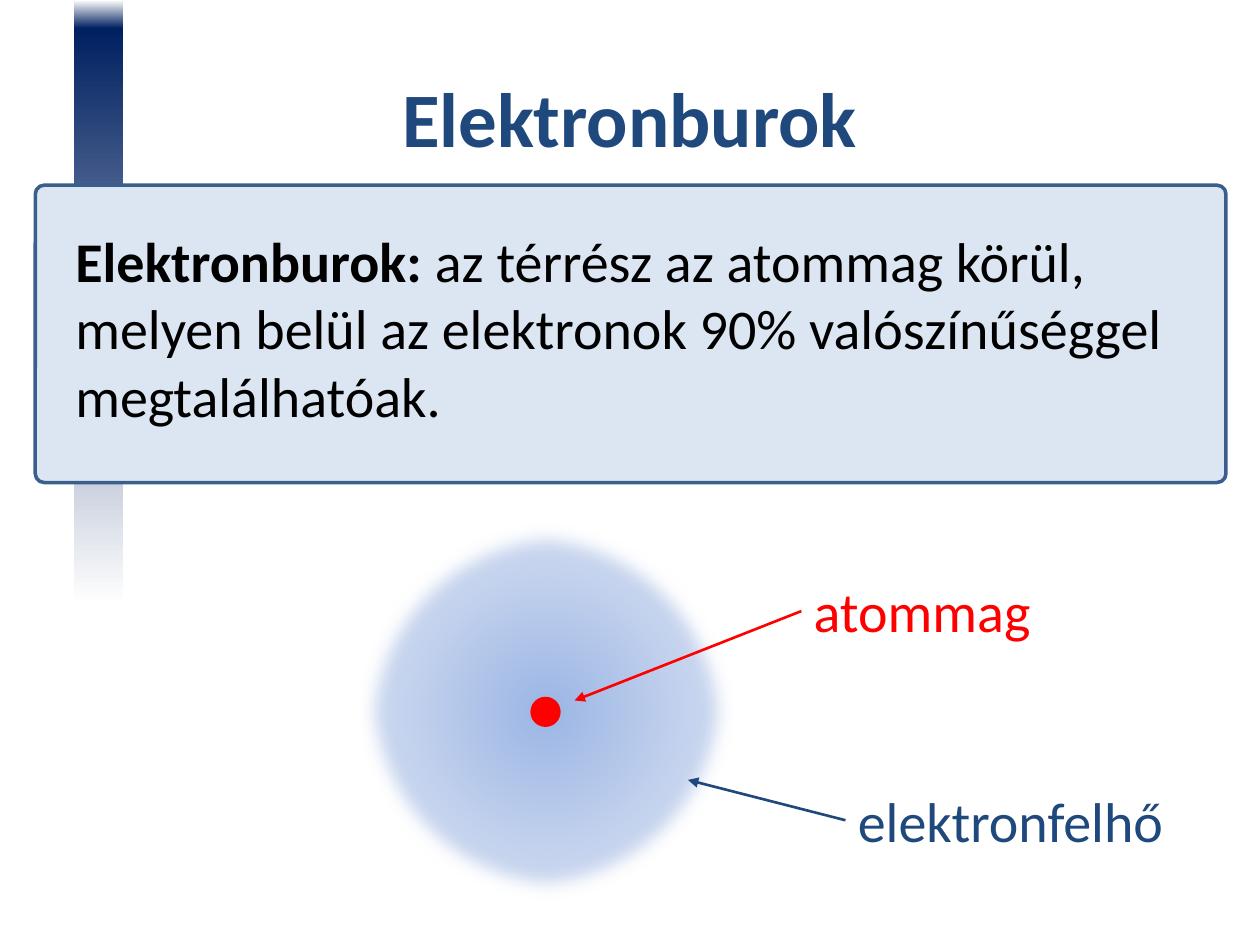
from lxml.etree import SubElement as Sub
from pptx import Presentation
from pptx.dml.color import RGBColor
from pptx.enum.shapes import MSO_CONNECTOR as Link, MSO_SHAPE as Form
from pptx.enum.text import MSO_ANCHOR as Anchor, PP_ALIGN as Align
from pptx.oxml.ns import qn
from pptx.util import Inches, Pt

BLACK = RGBColor(0x00, 0x00, 0x00)
WHITE = RGBColor(0xFF, 0xFF, 0xFF)
RED = RGBColor(0xFF, 0x00, 0x00)
BLUE = RGBColor(0x1F, 0x49, 0x7D)
NAVY = RGBColor(0x00, 0x20, 0x60)
STEEL = RGBColor(0x3A, 0x5F, 0x8C)
PALE = RGBColor(0xDC, 0xE6, 0xF2)
CORE = RGBColor(0x9A, 0xB5, 0xE4)
MIST = RGBColor(0xC2, 0xD1, 0xED)
HAZE = RGBColor(0xE1, 0xE8, 0xF5)


def write(para, text, font="Calibri", size=32, color=BLACK, bold=False):
    run = para.add_run()
    run.text = text
    run.font.name = font
    run.font.size = Pt(size)
    run.font.bold = bold
    run.font.color.rgb = color


class Deck:
    font = "Calibri"

    def __init__(self):
        self.show = Presentation()
        self.show.slide_width = Inches(10)
        self.show.slide_height = Inches(7.5)
        self.slide = self.show.slides.add_slide(self.show.slide_layouts[6])

    def shape(self, form, box, fill=None, line=None):
        item = self.slide.shapes.add_shape(form, *map(Inches, box))
        item.shadow.inherit = False
        if fill is not None:
            item.fill.solid()
            item.fill.fore_color.rgb = fill
        if line is None:
            item.line.fill.background()
        else:
            item.line.color.rgb = line
            item.line.width = Pt(2)
        return item

    def blend(self, form, box, stops, angle=None, soft=0):
        item = self.shape(form, box)
        item.fill.gradient()
        props = item._element.spPr
        grad = props.find(qn("a:gradFill"))
        for child in list(grad):
            grad.remove(child)
        marks = Sub(grad, qn("a:gsLst"))
        for place, color in stops:
            mark = Sub(marks, qn("a:gs"), pos=str(place * 1000))
            Sub(mark, qn("a:srgbClr"), val=str(color))
        if angle is None:
            ring = Sub(grad, qn("a:path"), path="circle")
            Sub(ring, qn("a:fillToRect"), **dict.fromkeys("ltrb", "50000"))
        else:
            Sub(grad, qn("a:lin"), ang=str(angle * 60000), scaled="0")
        if soft:
            Sub(props.find(qn("a:effectLst")), qn("a:softEdge"), rad=str(Pt(soft)))

    def text(self, box, parts, wrap=True, align=Align.LEFT, anchor=Anchor.TOP, gap=0, **look):
        frame = self.slide.shapes.add_textbox(*map(Inches, box)).text_frame
        frame.word_wrap = wrap
        frame.vertical_anchor = anchor
        para = frame.paragraphs[0]
        para.alignment = align
        para.space_before = Pt(gap)
        for words, bold in parts:
            write(para, words, font=self.font, bold=bold, **look)

    def arrow(self, start, end, color):
        item = self.slide.shapes.add_connector(Link.STRAIGHT, *map(Inches, start + end))
        item.line.color.rgb = color
        item.line.width = Pt(1.5)
        Sub(item.line._get_or_add_ln(), qn("a:tailEnd"), type="triangle")
        Sub(item._element.spPr, qn("a:effectLst"))

    def label(self, word, box, tip, color):
        left, top, width, height = box
        self.text(box, [(word, False)], wrap=False, color=color)
        self.arrow((left, top + height / 2), tip, color)


def main():
    deck = Deck()
    deck.blend(Form.RECTANGLE, (0.59, 0, 0.39, 7.5),
               [(36, WHITE), (97, NAVY), (100, WHITE)], angle=270)
    panel = deck.shape(Form.ROUNDED_RECTANGLE, (0.28, 1.47, 9.45, 2.36), PALE, STEEL)
    panel.adjustments[0] = 0.03
    deck.text((0.5, 0.3, 9, 1.25), [("Elektronburok", True)],
              align=Align.CENTER, anchor=Anchor.MIDDLE, size=44, color=BLUE)
    deck.text((0.5, 1.75, 9, 4.95), [
        ("Elektronburok: ", True),
        ("az térrész az atommag körül, melyen belül az elektronok "
         "90% valószínűséggel megtalálhatóak.", False),
    ], gap=6.4)
    deck.blend(Form.OVAL, (2.83, 4.14, 3.01, 3.01),
               [(0, CORE), (50, MIST), (100, HAZE)], soft=10)
    deck.shape(Form.OVAL, (4.21, 5.53, 0.24, 0.24), RED)
    deck.label("atommag", (6.36, 4.53, 1.94, 0.64), (4.56, 5.56), RED)
    deck.label("elektronfelhő", (6.71, 6.19, 2.65, 0.64), (5.46, 6.19), BLUE)
    deck.show.save("out.pptx")


if __name__ == "__main__":
    main()
